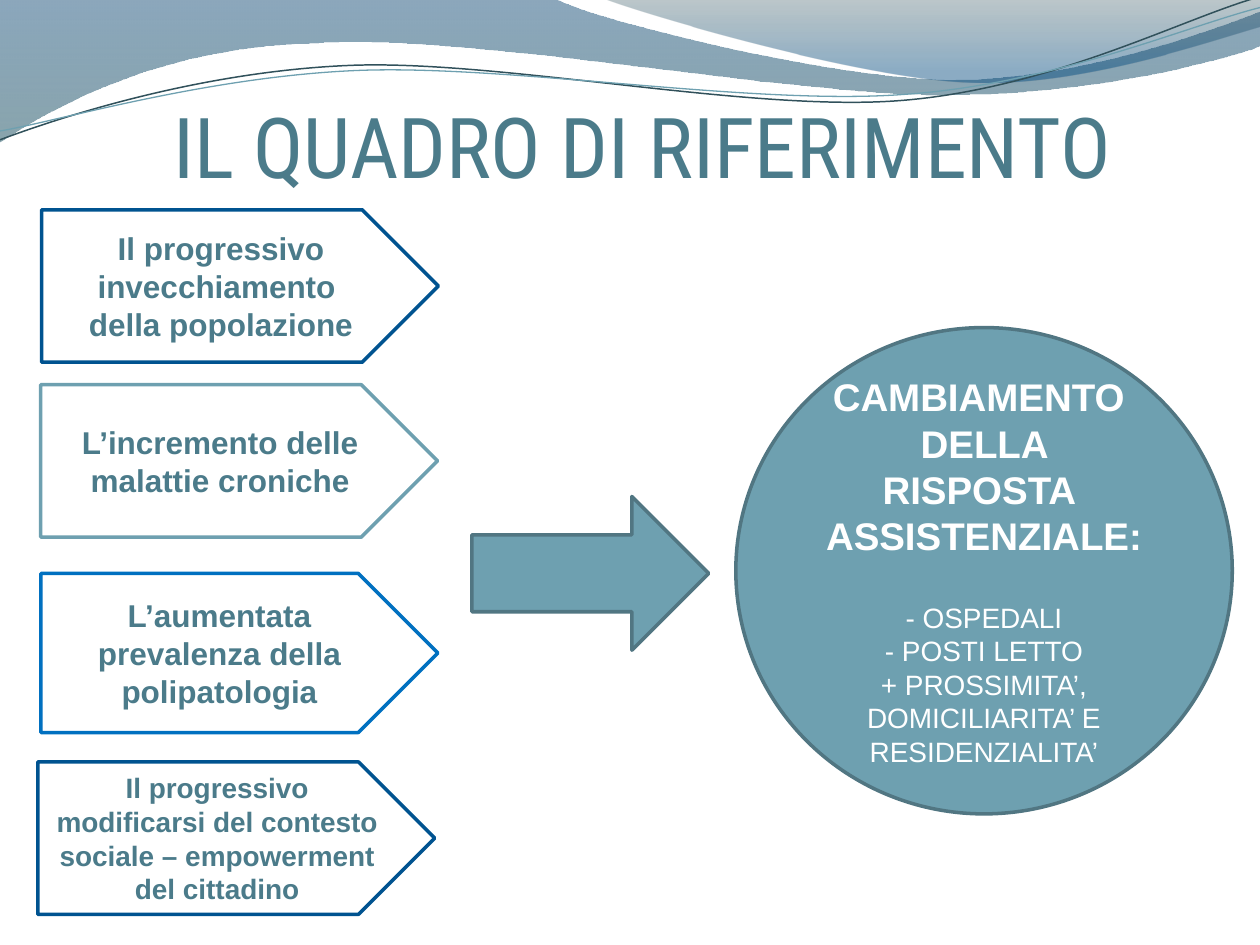
from dataclasses import dataclass

from lxml import etree
from pptx import Presentation
from pptx.dml.color import RGBColor
from pptx.enum import shapes, text
from pptx.oxml.ns import qn
from pptx.util import Inches, Pt

WIDTH, HEIGHT = Inches(10), Inches(7.5)
COLUMN, ROW = WIDTH / 100, HEIGHT / 75
TEAL, DARK_TEAL, INK, WHITE = "6EA0B0", "517682", "4B7B8A", "FFFFFF"


@dataclass(frozen=True)
class Area:
    column: float
    row: float
    columns: float
    rows: float

    def lengths(self) -> tuple:
        return (round(self.column * COLUMN), round(self.row * ROW),
                round(self.columns * COLUMN), round(self.rows * ROW))


@dataclass(frozen=True)
class Line:
    words: str
    size: float
    color: str = INK
    bold: bool = True
    font: str = "Arial"
    before: float = 0


@dataclass(frozen=True)
class Block:
    kind: shapes.MSO_SHAPE
    area: Area
    fill: str
    outline: str
    lines: tuple = ()


@dataclass(frozen=True)
class Stop:
    position: float
    color: str
    opacity: int


@dataclass(frozen=True)
class Wave:
    start: tuple
    segments: tuple
    stops: tuple = ()
    outline: str = ""
    weight: float = 0


WAVES = (
    Wave((0, 0), (
        ((44, -0.1),),
        ((47.6, 1.7), (66.4, 6.3), (75.8, 6.3)),
        ((85.3, 6.3), (95.8, 2.6), (100, 0.9)),
        ((100.1, 3.6),),
        ((98.3, 4.4), (87, 7.6), (74.6, 7.5)),
        ((62.2, 7.5), (38.2, 2.8), (25.7, 3.4)),
        ((12.9, 3.6), (4.6, 8.3), (-0.1, 11.3)),
        ((0, 0),),
    ), stops=(Stop(0, "003D6B", 45), Stop(1, "275A69", 55))),
    Wave((47.9, -0.1), (
        ((50.9, 1.1), (68.2, 6.2), (76.9, 6.5)),
        ((85.6, 6.9), (96.1, 3.2), (100, 2.1)),
        ((100, 0),),
        ((47.9, -0.1),),
    ), stops=(Stop(0, "244751", 30), Stop(0.8, "00497F", 45))),
    Wave((0, 11.1), (
        ((4.8, 9.3), (15.8, 5.7), (27.7, 5.2)),
        ((39.5, 4.7), (59.3, 8.9), (71.3, 8)),
        ((83.3, 7.1), (93.8, 1.5), (99.8, -0.2)),
    ), outline="31515B", weight=0.85),
    Wave((0, 10.4), (
        ((4.7, 9.6), (16.4, 6.1), (28.3, 5.6)),
        ((40.3, 5.1), (59.7, 8.4), (71.7, 7.5)),
        ((83.6, 6.7), (94.1, 2.1), (100, 0.6)),
    ), outline=TEAL, weight=0.75),
)

TITLE = Line("IL QUADRO DI RIFERIMENTO", 48, bold=False, font="Roboto Condensed")
PENTAGON = shapes.MSO_SHAPE.PENTAGON

BLOCKS = (
    Block(PENTAGON, Area(3.3, 16.65, 31.5, 12.1), WHITE, "005390", (
        Line("Il progressivo invecchiamento ", 18),
        Line("della popolazione", 18))),
    Block(PENTAGON, Area(3.23, 30.53, 31.5, 12.1), WHITE, TEAL, (
        Line("L’incremento delle malattie croniche", 18),)),
    Block(PENTAGON, Area(3.25, 45.5, 31.5, 12.64), WHITE, "0070C0", (
        Line("L’aumentata prevalenza della polipatologia", 18),)),
    Block(PENTAGON, Area(3, 60.47, 31.5, 12.1), WHITE, "005390", (
        Line("Il progressivo modificarsi del contesto sociale – empowerment del cittadino", 16),)),
    Block(shapes.MSO_SHAPE.RIGHT_ARROW, Area(37.45, 39.4, 18.8, 12.2), TEAL, DARK_TEAL),
    Block(shapes.MSO_SHAPE.OVAL, Area(58.4, 26, 39.4, 38.6), TEAL, DARK_TEAL, (
        Line("CAMBIAMENTO ", 22, WHITE),
        Line("DELLA RISPOSTA  ASSISTENZIALE:", 22, WHITE),
        Line("- OSPEDALI", 16, WHITE, False, before=24),
        Line("- POSTI LETTO", 16, WHITE, False),
        Line("+ PROSSIMITA’, DOMICILIARITA’ E RESIDENZIALITA’", 16, WHITE, False))),
)


def rgb(color: str) -> RGBColor:
    return RGBColor.from_string(color)


def write_lines(frame, lines: tuple, anchor) -> None:
    frame.word_wrap = True
    frame.vertical_anchor = anchor
    for index, line in enumerate(lines):
        para = frame.add_paragraph() if index else frame.paragraphs[0]
        para.text = line.words
        para.alignment = text.PP_ALIGN.CENTER
        para.space_before = Pt(line.before)
        para.font.name = line.font
        para.font.size = Pt(line.size)
        para.font.bold = line.bold
        para.font.color.rgb = rgb(line.color)


def bend_segments(shape, segments: tuple) -> None:
    steps = iter(list(shape.element.spPr.iter(qn("a:lnTo"))))
    for segment in segments:
        group = [next(steps) for _ in segment]
        if len(group) == 3:
            curve = etree.Element(qn("a:cubicBezTo"))
            group[0].addprevious(curve)
            for step in group:
                curve.append(step[0])
                step.getparent().remove(step)


def fill_gradient(shape, stops: tuple) -> None:
    shape.fill.gradient()
    shape.fill.gradient_angle = 270
    for target, stop in zip(shape.fill.gradient_stops, stops):
        target.position = stop.position
        target.color.rgb = rgb(stop.color)
    for color, stop in zip(shape.element.spPr.iter(qn("a:srgbClr")), stops):
        etree.SubElement(color, qn("a:alpha"), val=str(stop.opacity * 1000))


def draw_wave(page, wave: Wave) -> None:
    points = [wave.start, *(point for segment in wave.segments for point in segment)]
    start, *rest = [(x * COLUMN, y * ROW) for x, y in points]
    builder = page.shapes.build_freeform(*start)
    builder.add_line_segments(rest, close=bool(wave.stops))
    shape = builder.convert_to_shape()
    bend_segments(shape, wave.segments)
    shape.shadow.inherit = False
    if wave.stops:
        fill_gradient(shape, wave.stops)
        shape.line.fill.background()
    else:
        shape.fill.background()
        shape.line.color.rgb = rgb(wave.outline)
        shape.line.width = Pt(wave.weight)


def draw_title(page, area: Area, line: Line) -> None:
    frame = page.shapes.add_textbox(*area.lengths()).text_frame
    frame.margin_left = frame.margin_right = frame.margin_bottom = 0
    write_lines(frame, (line,), text.MSO_ANCHOR.BOTTOM)


def draw_block(page, block: Block) -> None:
    shape = page.shapes.add_shape(block.kind, *block.area.lengths())
    shape.shadow.inherit = False
    shape.fill.solid()
    shape.fill.fore_color.rgb = rgb(block.fill)
    shape.line.color.rgb = rgb(block.outline)
    shape.line.width = Pt(2)
    write_lines(shape.text_frame, block.lines, text.MSO_ANCHOR.MIDDLE)


def main() -> None:
    deck = Presentation()
    deck.slide_width, deck.slide_height = WIDTH, HEIGHT
    page = deck.slides.add_slide(deck.slide_layouts[6])
    for wave in WAVES:
        draw_wave(page, wave)
    draw_title(page, Area(6, 5.1, 90, 10.4), TITLE)
    for block in BLOCKS:
        draw_block(page, block)
    deck.save("out.pptx")


if __name__ == "__main__":
    main()
